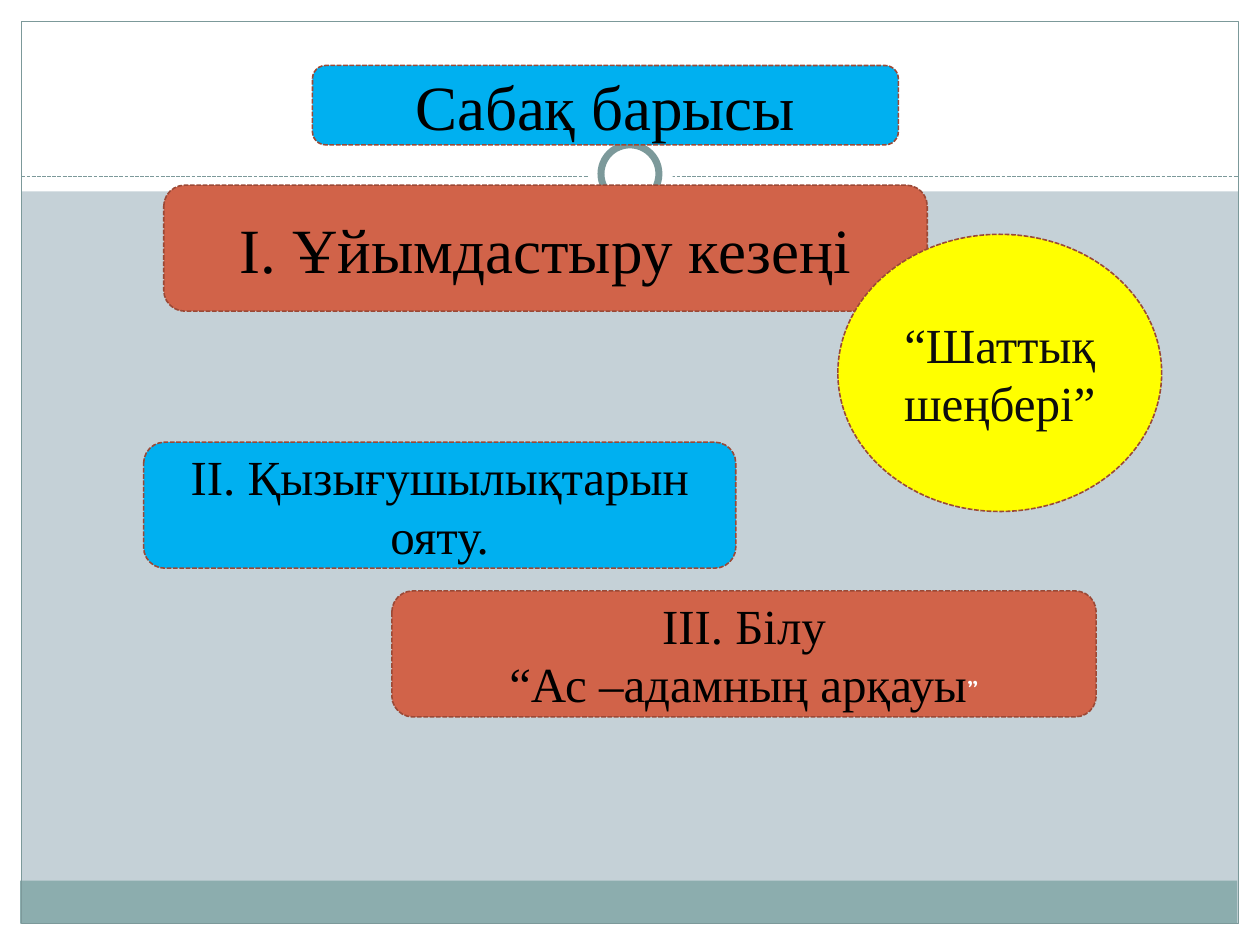
from lxml.etree import SubElement
from pptx import Presentation
from pptx.dml.color import RGBColor
from pptx.enum.dml import MSO_LINE
from pptx.enum.shapes import MSO_CONNECTOR, MSO_SHAPE
from pptx.enum.text import MSO_ANCHOR, PP_ALIGN
from pptx.oxml.ns import qn
from pptx.util import Inches, Pt

COLORS = {
    "bg": "C5D1D7", "white": "FFFFFF", "band": "8CADAE", "frame": "7C999A",
    "red": "D16349", "blue": "00B0F0", "yellow": "FFFF00", "edge": "9B4936",
    "black": "000000", "ink": "0D0D0D",
}
RECT, ROUND, OVAL = MSO_SHAPE.RECTANGLE, MSO_SHAPE.ROUNDED_RECTANGLE, MSO_SHAPE.OVAL


def rgb(name):
    return RGBColor.from_string(COLORS[name])


class Deck:
    """Holds the text style and the current slide, and draws its elements."""

    def __init__(self, prs):
        self.font = {"name": "Times New Roman", "size": Pt(28)}
        self.s = prs.slides.add_slide(prs.slide_layouts[6])
        fill = self.s.background.fill
        fill.solid()
        fill.fore_color.rgb = rgb("bg")

    def stroke(self, line, color, width, dash=None):
        line.color.rgb = rgb(color)
        for key, value in {"width": Pt(width), "dash_style": dash}.items():
            setattr(line, key, value)

    def shape(self, kind, at, fill=None, line=None):
        sp = self.s.shapes.add_shape(kind, *map(Inches, at))
        sp.shadow.inherit = False
        if fill:
            sp.fill.solid()
            sp.fill.fore_color.rgb = rgb(fill)
        else:
            sp.fill.background()
        if line:
            self.stroke(sp.line, *line)
        else:
            sp.line.fill.background()
        return sp

    def rule(self, x1, y1, x2, y2):
        c = self.s.shapes.add_connector(MSO_CONNECTOR.STRAIGHT, *map(Inches, (x1, y1, x2, y2)))
        self.stroke(c.line, "frame", 0.75, MSO_LINE.SQUARE_DOT)
        SubElement(c._element.spPr, qn("a:effectLst"))

    def run(self, p, text, color="black", **changes):
        r = p.add_run()
        r.text = text
        for key, value in {**self.font, **changes}.items():
            setattr(r.font, key, value)
        r.font.color.rgb = rgb(color)

    def label(self, kind, at, fill, lines, color="black", size=28):
        sp = self.shape(kind, at, fill, ("edge", 0.9, MSO_LINE.SQUARE_DOT))
        tf = sp.text_frame
        for key, value in {"word_wrap": True, "vertical_anchor": MSO_ANCHOR.MIDDLE}.items():
            setattr(tf, key, value)
        for i, text in enumerate(lines):
            p = tf.add_paragraph() if i else tf.paragraphs[0]
            p.alignment = PP_ALIGN.CENTER
            self.run(p, text, color, size=Pt(size))
        return tf


def main():
    prs = Presentation()
    prs.slide_width, prs.slide_height = Inches(10), Inches(7.5)
    deck = Deck(prs)

    for at in ((0, 7.33, 10, 0.17), (0, 0, 10, 1.52), (0, 0, 0.17, 7.5), (9.83, 0, 0.17, 7.5)):
        deck.shape(RECT, at, "white")
    deck.shape(RECT, (0.16, 6.99, 9.66, 0.34), "band")
    deck.shape(RECT, (0.17, 0.17, 9.66, 7.16), line=("frame", 0.75))
    deck.rule(0.17, 1.4, 9.83, 1.4)
    deck.shape(OVAL, (4.67, 1.05, 0.67, 0.67), "white")
    deck.shape(OVAL, (4.77, 1.15, 0.46, 0.46), "white", ("frame", 4))

    deck.label(ROUND, (1.3, 1.47, 6.06, 1), "red", ["І. Ұйымдастыру кезеңі"], size=36)
    deck.label(ROUND, (2.48, 0.52, 4.65, 0.63), "blue", ["Сабақ барысы"], size=36)
    deck.label(ROUND, (1.14, 3.51, 4.7, 1), "blue", ["ІІ. Қызығушылықтарын ояту."])
    tf = deck.label(ROUND, (3.11, 4.69, 5.59, 1), "red", ["ІІІ. Білу", "“Ас –адамның арқауы"])
    deck.run(tf.paragraphs[-1], "”", "white", name="Cambria", size=Pt(18))
    deck.label(OVAL, (6.65, 1.86, 2.57, 2.2), "yellow", ["“Шаттық шеңбері”"], "ink")

    prs.save("out.pptx")


if __name__ == "__main__":
    main()
